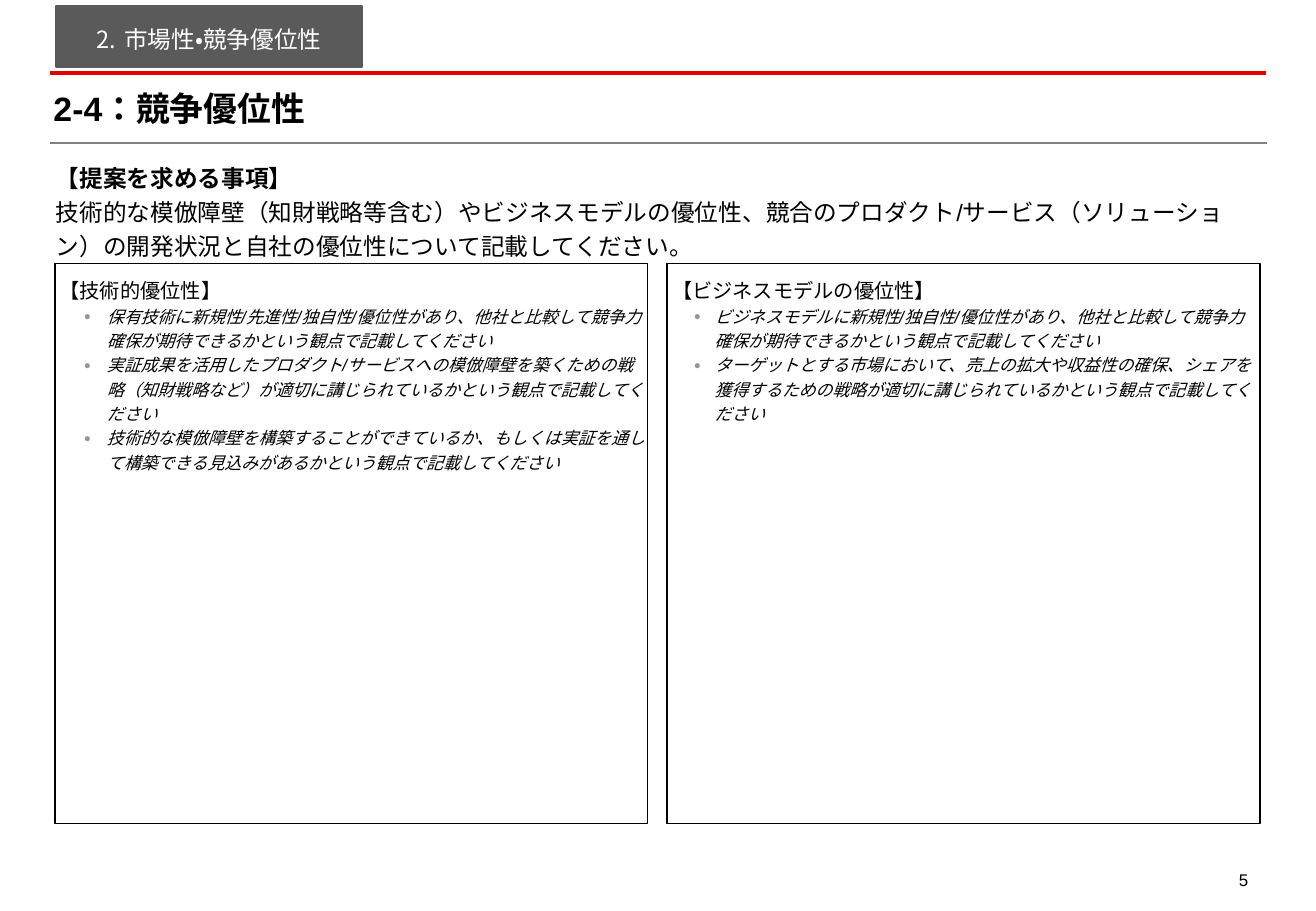
"""Build the competitive advantage slide with its two answer frames."""
from dataclasses import dataclass
from typing import Optional

from lxml.etree import SubElement
from pptx import Presentation
from pptx.dml.color import RGBColor
from pptx.enum.lang import MSO_LANGUAGE_ID as Lang
from pptx.enum.shapes import MSO_CONNECTOR as Connector, MSO_SHAPE as Shape
from pptx.enum.text import MSO_ANCHOR as Anchor, PP_ALIGN as Align
from pptx.oxml.ns import qn
from pptx.util import Inches, Pt

BLACK = RGBColor(0x00, 0x00, 0x00)
WHITE = RGBColor(0xFF, 0xFF, 0xFF)
RED = RGBColor(0xE6, 0x00, 0x00)
GRAY = RGBColor(0x80, 0x80, 0x80)
DARK_GRAY = RGBColor(0x5A, 0x5A, 0x5A)
BULLET_GRAY = RGBColor(0x96, 0x96, 0x96)
FONT = "Arial"


@dataclass(frozen=True)
class Rule:
    y: float
    right: float
    color: RGBColor
    width: float


@dataclass(frozen=True)
class Frame:
    left: float
    indent: float
    hanging: float
    heading: str
    points: tuple[str, ...]


RULES = (Rule(0.6, 10.42, RED, 2), Rule(1.18, 10.43, GRAY, 1.25))
FRAMES = (
    Frame(0.45, 0.39, 0.19, "【技術的優位性】", (
        "保有技術に新規性/先進性/独自性/優位性があり、他社と比較して競争力確保が期待できるかという観点で記載してください",
        "実証成果を活用したプロダクト/サービスへの模倣障壁を築くための戦略（知財戦略など）が適切に講じられているかという観点で記載してください",
        "技術的な模倣障壁を構築することができているか、もしくは実証を通して構築できる見込みがあるかという観点で記載してください",
    )),
    Frame(5.49, 0.35, 0.17, "【ビジネスモデルの優位性】", (
        "ビジネスモデルに新規性/独自性/優位性があり、他社と比較して競争力確保が期待できるかという観点で記載してください",
        "ターゲットとする市場において、売上の拡大や収益性の確保、シェアを獲得するための戦略が適切に講じられているかという観点で記載してください",
    )),
)


def add_run(paragraph, text: str, size: float, color: RGBColor = BLACK,
            bold: bool = False, italic: bool = False) -> None:
    run = paragraph.add_run()
    run.text = text
    font = run.font
    font.name, font.size, font.bold, font.italic = FONT, Pt(size), bold, italic
    font.color.rgb = color
    font.language_id = Lang.JAPANESE


def next_paragraph(text_frame, align: Align = Align.LEFT):
    first = text_frame.paragraphs[0]
    paragraph = text_frame.add_paragraph() if first.runs else first
    paragraph.alignment = align
    paragraph.line_spacing = 1.2
    return paragraph


def set_insets(text_frame, left: float, top: float, right: float, bottom: float) -> None:
    text_frame.margin_left, text_frame.margin_top = Inches(left), Inches(top)
    text_frame.margin_right, text_frame.margin_bottom = Inches(right), Inches(bottom)


def set_bullet(paragraph, indent: float, hanging: float, color: RGBColor,
               size: int = 100, start: Optional[int] = None) -> None:
    properties = paragraph._p.get_or_add_pPr()
    properties.set("marL", str(Inches(indent)))
    properties.set("indent", str(-Inches(hanging)))
    SubElement(SubElement(properties, qn("a:buClr")), qn("a:srgbClr"), val=str(color))
    SubElement(properties, qn("a:buSzPct"), val=str(size * 1000))
    SubElement(properties, qn("a:buFont"), typeface=FONT)
    if start is None:
        SubElement(properties, qn("a:buChar"), char="●")
    else:
        SubElement(properties, qn("a:buAutoNum"), type="arabicPeriod", startAt=str(start))


def add_rule(slide, rule: Rule) -> None:
    y = Inches(rule.y)
    line = slide.shapes.add_connector(Connector.STRAIGHT, Inches(0.41), y, Inches(rule.right), y)
    line.line.color.rgb = rule.color
    line.line.width = Pt(rule.width)
    SubElement(line._element.spPr, qn("a:effectLst"))


def add_box(slide, left: float, top: float, width: float, height: float,
            fill: RGBColor, outline: RGBColor):
    box = slide.shapes.add_shape(Shape.RECTANGLE, Inches(left), Inches(top),
                                 Inches(width), Inches(height))
    box.shadow.inherit = False
    box.fill.solid()
    box.fill.fore_color.rgb = fill
    box.line.color.rgb = outline
    box.line.width = Pt(1)
    return box.text_frame


def add_frame(slide, frame: Frame) -> None:
    content = add_box(slide, frame.left, 2.17, 4.88, 4.61, WHITE, BLACK)
    content.word_wrap = True
    content.vertical_anchor = Anchor.TOP
    set_insets(content, 0.04, 0.08, 0.02, 0.02)
    add_run(next_paragraph(content), frame.heading, 12)
    for point in frame.points:
        paragraph = next_paragraph(content)
        paragraph.level = 1
        set_bullet(paragraph, frame.indent, frame.hanging, BULLET_GRAY, 70)
        add_run(paragraph, point, 10, italic=True)


def add_title(slide) -> None:
    title = slide.shapes.title
    title.left, title.top = Inches(0.44), Inches(0.72)
    title.width, title.height = Inches(9.91), Inches(0.34)
    heading = title.text_frame
    heading.vertical_anchor = Anchor.MIDDLE
    set_insets(heading, 0, 0, 0, 0)
    heading.paragraphs[0].alignment = Align.LEFT
    add_run(heading.paragraphs[0], "2-4：競争優位性", 20, bold=True)


def add_request(slide) -> None:
    request = slide.shapes.add_textbox(Inches(0.46), Inches(1.3), Inches(9.91),
                                       Inches(0.82)).text_frame
    request.word_wrap = True
    set_insets(request, 0, 0, 0, 0)
    add_run(next_paragraph(request), "【提案を求める事項】", 14, bold=True)
    add_run(next_paragraph(request),
            "技術的な模倣障壁（知財戦略等含む）やビジネスモデルの優位性、競合のプロダクト/サービス"
            "（ソリューション）の開発状況と自社の優位性について記載してください。", 14)


def add_section_tag(slide) -> None:
    tag = add_box(slide, 0.46, 0.05, 2.52, 0.5, DARK_GRAY, DARK_GRAY)
    tag.word_wrap = False
    tag.vertical_anchor = Anchor.MIDDLE
    set_insets(tag, 0.02, 0.02, 0.02, 0.02)
    paragraph = next_paragraph(tag, Align.CENTER)
    set_bullet(paragraph, 0.23, 0.23, WHITE, start=2)
    add_run(paragraph, "市場性・競争優位性", 14, WHITE)


def add_page_number(slide) -> None:
    number = slide.shapes.add_textbox(Inches(9.93), Inches(7.08), Inches(0.44),
                                      Inches(0.28)).text_frame
    number.word_wrap = True
    add_run(next_paragraph(number, Align.RIGHT), "5", 10)


def main() -> None:
    presentation = Presentation()
    presentation.slide_width, presentation.slide_height = Inches(10.83), Inches(7.5)
    slide = presentation.slides.add_slide(presentation.slide_layouts[5])
    add_page_number(slide)
    for rule in RULES:
        add_rule(slide, rule)
    add_title(slide)
    add_request(slide)
    add_section_tag(slide)
    for frame in FRAMES:
        add_frame(slide, frame)
    presentation.save("out.pptx")


if __name__ == "__main__":
    main()
